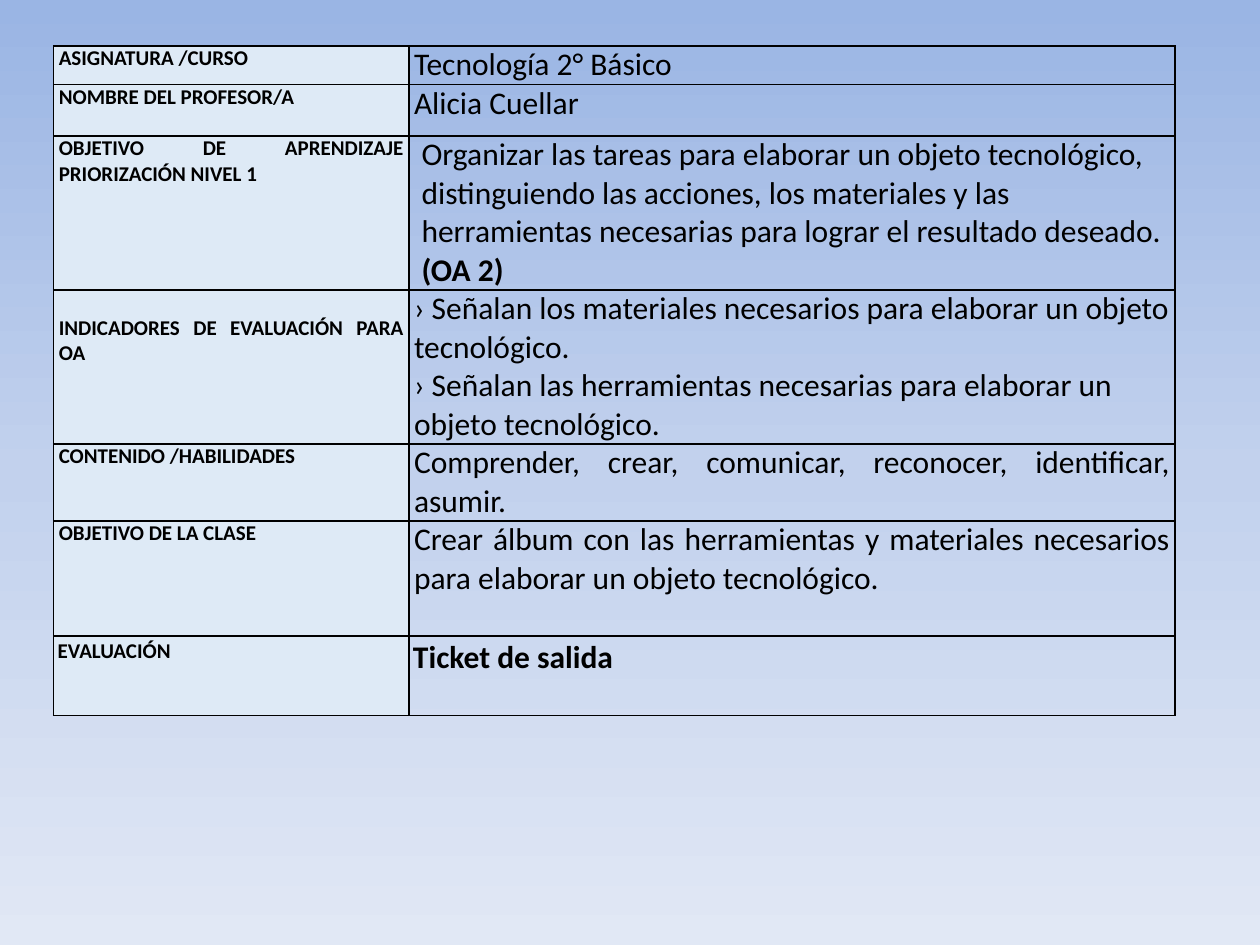
import copy

import lxml.etree
import pptx
import pptx.dml.color
import pptx.enum.text
import pptx.oxml.ns
import pptx.util

Pt = pptx.util.Pt
qn = pptx.oxml.ns.qn
LEFT = pptx.enum.text.PP_ALIGN.LEFT
JUSTIFY = pptx.enum.text.PP_ALIGN.JUSTIFY

ROWS = [
    dict(height=22, label="ASIGNATURA /CURSO", lines=["Tecnología 2° Básico"]),
    dict(height=29.5, label="NOMBRE DEL PROFESOR/A", lines=["Alicia Cuellar"]),
    dict(height=88, label="OBJETIVO DE APRENDIZAJE PRIORIZACIÓN NIVEL 1",
         lines=["Organizar las tareas para elaborar un objeto tecnológico, "
                "distinguiendo las acciones, los materiales y las herramientas "
                "necesarias para lograr el resultado deseado.", "(OA 2)"],
         bold=[False, True], align=LEFT, inset=7.2),
    dict(height=88, label="INDICADORES DE EVALUACIÓN PARA OA", label_top=14.6,
         lines=["› Señalan los materiales necesarios para elaborar un objeto tecnológico.",
                "› Señalan las herramientas necesarias para elaborar un objeto tecnológico."],
         align=LEFT),
    dict(height=44, label="CONTENIDO /HABILIDADES",
         lines=["Comprender, crear, comunicar, reconocer, identificar, asumir."]),
    dict(height=65.7, label="OBJETIVO DE LA CLASE",
         lines=["Crear álbum con las herramientas y materiales necesarios "
                "para elaborar un objeto tecnológico."]),
    dict(height=45.5, label="EVALUACIÓN", lines=["Ticket de salida"],
         bold=[True], label_inset=2.3, inset=2.3, label_top=1.4, top=1.4),
]


def rgb(value):
    """Return the colour for a hex string."""
    return pptx.dml.color.RGBColor.from_string(value)


def add_text(p, text, size=18, bold=False, color="000000", align=JUSTIFY):
    """Write one formatted run into a paragraph."""
    p.alignment = align
    r = p.add_run()
    r.text = text
    r.font.name = "Calibri"
    r.font.size = Pt(size)
    r.font.bold = bold
    r.font.color.rgb = rgb(color)


def set_borders(cell, color="000000", width=1):
    """Draw a solid line on all four sides of a cell."""
    tc_pr = cell._tc.get_or_add_tcPr()
    for side in ("a:lnL", "a:lnR", "a:lnT", "a:lnB"):
        ln = lxml.etree.SubElement(tc_pr, qn(side), w=str(Pt(width)))
        fill = lxml.etree.SubElement(ln, qn("a:solidFill"))
        lxml.etree.SubElement(fill, qn("a:srgbClr"), val=color)


def fill_cell(cell, lines, bold, size=18, align=JUSTIFY, inset=2.9, top=0, fill=None):
    """Format a cell and write its paragraphs."""
    set_borders(cell)
    if fill:
        cell.fill.solid()
        cell.fill.fore_color.rgb = rgb(fill)
    else:
        cell.fill.background()
    cell.margin_left = cell.margin_right = Pt(inset)
    cell.margin_top, cell.margin_bottom = Pt(top), Pt(0)
    tf = cell.text_frame
    for i, (line, is_bold) in enumerate(zip(lines, bold)):
        p = tf.add_paragraph() if i else tf.paragraphs[0]
        add_text(p, line, size=size, bold=is_bold, align=align)


def add_plan_table(slide, left, top, width):
    """Place the lesson plan table, with labels beside their contents."""
    height = sum(row["height"] for row in ROWS)
    sp = slide.shapes.add_table(len(ROWS), 2, Pt(left), Pt(top), Pt(width), Pt(height))
    table = sp.table
    table.first_row = table.horz_banding = False
    label_width = 203
    table.columns[0].width = Pt(label_width)
    table.columns[1].width = Pt(width - label_width)
    for i, row in enumerate(ROWS):
        table.rows[i].height = Pt(row["height"])
        fill_cell(table.cell(i, 0), [row["label"]], [True], size=12, fill="DEEAF6",
                  inset=row.get("label_inset", 2.9), top=row.get("label_top", 0))
        fill_cell(table.cell(i, 1), row["lines"],
                  row.get("bold", [False] * len(row["lines"])),
                  align=row.get("align", JUSTIFY),
                  inset=row.get("inset", 2.9), top=row.get("top", 0))


def set_background(slide, colors):
    """Fill the background with an evenly spaced gradient from top to bottom."""
    fill = slide.background.fill
    fill.gradient()
    fill.gradient_angle = 270
    first = next(slide.element.iter(qn("a:gs")))
    for _ in colors[2:]:
        first.addnext(copy.deepcopy(first))
    for i, (stop, color) in enumerate(zip(fill.gradient_stops, colors)):
        stop.position = i / (len(colors) - 1)
        stop.color.rgb = rgb(color)


def main():
    """Build the slide and save it."""
    prs = pptx.Presentation()
    prs.slide_width, prs.slide_height = Pt(720), Pt(540)
    slide = prs.slides.add_slide(prs.slide_layouts[6])
    set_background(slide, ["9AB5E4", "C2D1ED", "E1E8F5"])
    add_plan_table(slide, left=30.7, top=26.2, width=640.8)
    prs.save("out.pptx")


if __name__ == "__main__":
    main()
